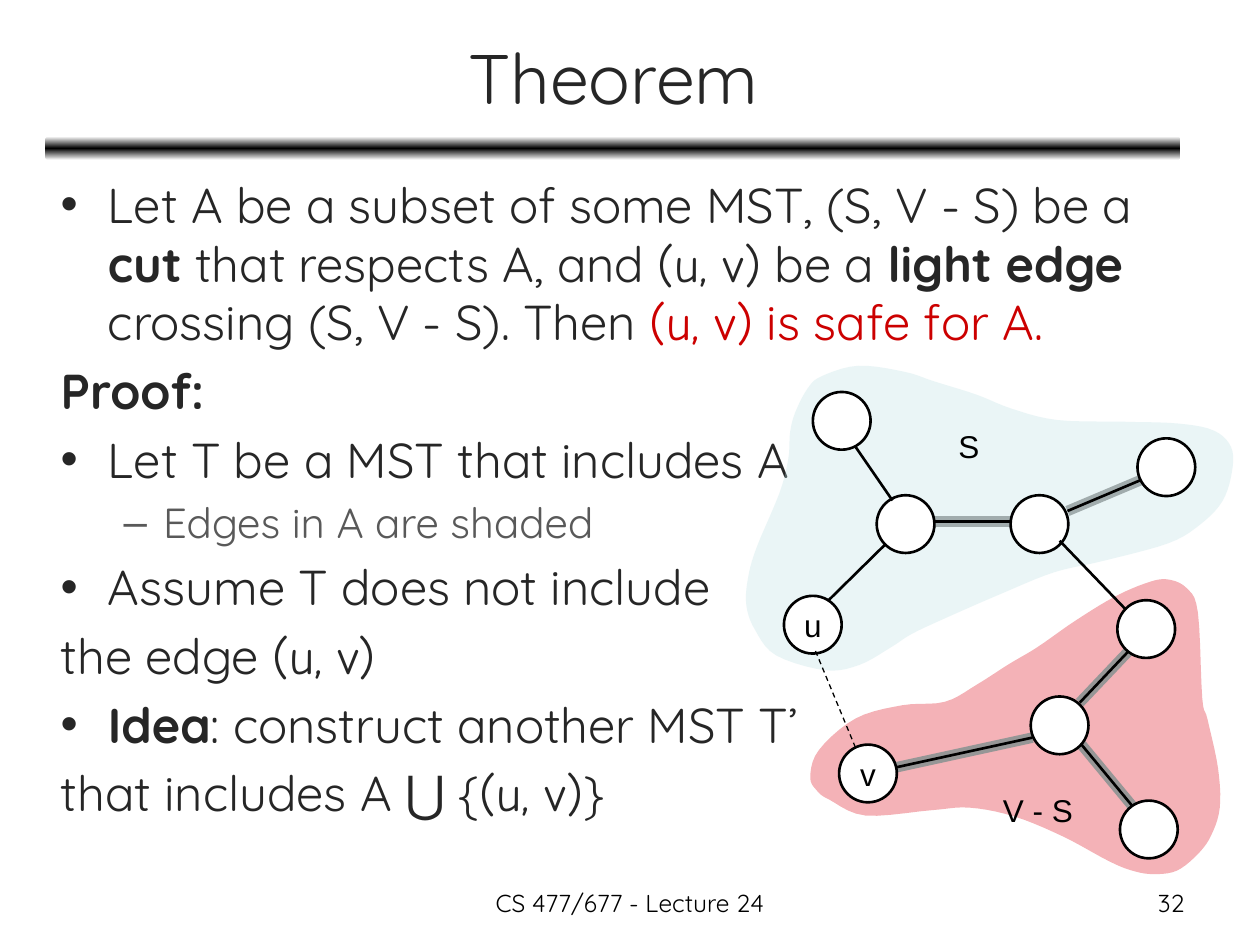
from typing import NamedTuple

from lxml import etree
from pptx import Presentation
from pptx import util as u
from pptx.dml.color import RGBColor
from pptx.enum import dml, shapes, text
from pptx.oxml.ns import qn

Pt = u.Pt
BLACK = RGBColor(0, 0, 0)
WHITE = RGBColor(255, 255, 255)
DARK = RGBColor(0x26, 0x26, 0x26)
GRAY = RGBColor(0x59, 0x59, 0x59)
SHADE = RGBColor(0x96, 0x96, 0x96)
RED = RGBColor(0xCC, 0, 0)
REST_FILL = RGBColor(0xDD, 0x01, 0x11)
S_FILL = RGBColor(0xBB, 0xE0, 0xE3)
BODY_FONT, MATH_FONT, LABEL_FONT = "Quicksand", "Comic Neue", "Arial"
NODE_SIZE = 33


class Piece(NamedTuple):
    text: str
    bold: bool = False
    font: str = BODY_FONT
    color: RGBColor = DARK


class Item(NamedTuple):
    pieces: list[Piece]
    bullet: str = ""
    level: int = 0


class Level(NamedTuple):
    size: float
    margin: float
    indent: float


class Node(NamedTuple):
    x: float
    y: float
    label: str = ""


class Edge(NamedTuple):
    start: tuple[float, float]
    end: tuple[float, float]
    shaded: bool = False


LEVELS = [Level(28, 27, -27), Level(24, 58.5, -22.5)]
PAIR = Piece("(u, v)", font=MATH_FONT)
ITEMS = [
    Item([Piece("Let A be a subset of some MST, (S, V - S) be a "), Piece("cut", True),
          Piece(" that respects A, and "), PAIR, Piece(" be a "), Piece("light edge", True),
          Piece(" crossing (S, V - S). Then "), PAIR._replace(color=RED),
          Piece(" is safe for A.", color=RED)], "•"),
    Item([Piece("Proof:", True)]),
    Item([Piece("Let T be a MST that includes A")], "•"),
    Item([Piece("Edges in A are shaded", color=GRAY)], "–", 1),
    Item([Piece("Assume T does not include")], "•"),
    Item([Piece("the edge "), PAIR]),
    Item([Piece("Idea", True), Piece(": construct another MST T’")], "•"),
    Item([Piece("that includes A ⋃ {"), PAIR, Piece("}")]),
]
NODES = [
    Node(448, 340.5, "u"), Node(501, 283), Node(577.5, 283), Node(650, 250.5),
    Node(638.5, 343), Node(464.5, 224), Node(589, 398), Node(640, 457.5),
    Node(479.5, 425.5, "v"),
]
EDGES = [
    Edge((534.5, 298), (577.5, 298), True), Edge((473, 343.5), (506, 311)),
    Edge((489, 255.5), (510, 286)), Edge((610, 292), (651.5, 274.5), True),
    Edge((605.5, 309), (643.5, 348.5)), Edge((512, 438.5), (590, 421.5), True),
    Edge((617, 401.5), (645, 372), True), Edge((618, 425.5), (647, 460.5), True),
]
REST_OUTLINE = [
    (540, 401), (515.5, 403), (489, 410.5), (468, 428.5), (463, 444), (467, 452),
    (474, 457), (494.5, 466), (532, 463), (554, 461.5), (579.5, 466.5), (607.5, 478),
    (633.5, 492), (647, 497.5), (659, 499.5), (672.5, 497.5), (684.5, 488), (692, 477.5),
    (697, 461.5), (696, 439), (690, 411), (687, 399), (684.5, 350), (678, 336),
    (666.5, 331), (654, 333.5), (636, 341.5), (614, 355), (592.5, 370), (576.5, 379.5),
    (558.5, 391),
]
S_OUTLINE = [
    (469.5, 215), (461.5, 222), (454.5, 235.5), (451.5, 247), (450.5, 262),
    (445.5, 281.5), (432.5, 312.5), (427.5, 330), (426.5, 346), (431.5, 360),
    (443.5, 374.5), (471.5, 383), (491, 380), (509, 370), (521.5, 362), (543, 352),
    (574, 338.5), (602.5, 327), (630.5, 320.5), (667.5, 310.5), (685.5, 300),
    (698.5, 286.5), (704, 269.5), (703.5, 255.5), (693.5, 246), (673, 242), (642, 241),
    (604, 240), (578, 233.5), (558, 225.5), (534, 218), (517, 212.5), (490.5, 209),
]


def place(shape, left: float, top: float, width: float, height: float) -> None:
    shape.left, shape.top, shape.width, shape.height = map(Pt, (left, top, width, height))


def style(run, size: float, font: str, color: RGBColor, bold: bool = False) -> None:
    run.font.size, run.font.name, run.font.bold = Pt(size), font, bold
    run.font.color.rgb = color


def add_item(paragraph, item: Item) -> None:
    level = LEVELS[item.level]
    paragraph.level = item.level
    properties = paragraph._p.get_or_add_pPr()
    properties.set("marL", str(Pt(level.margin)))
    properties.set("indent", str(Pt(level.indent)))
    if item.bullet:
        etree.SubElement(properties, qn("a:buChar")).set("char", item.bullet)
    else:
        etree.SubElement(properties, qn("a:buNone"))
    for piece in item.pieces:
        run = paragraph.add_run()
        run.text = piece.text
        style(run, level.size, piece.font, piece.color, piece.bold)


def smooth(points: list, steps: int = 5) -> list:
    """Return points on the closed Catmull-Rom curve through the given ones."""
    curve = []
    for i, b in enumerate(points):
        a, c, d = points[i - 1], points[(i + 1) % len(points)], points[(i + 2) % len(points)]
        for t in (step / steps for step in range(steps)):
            curve.append(tuple(
                q + t / 2 * (r - p + t * (2 * p - 5 * q + 4 * r - s + t * (3 * (q - r) + s - p)))
                for p, q, r, s in zip(a, b, c, d)))
    return curve


def add_region(slide, outline: list, color: RGBColor) -> None:
    """Draw a smooth region at 30 % opacity."""
    curve = [(Pt(x), Pt(y)) for x, y in smooth(outline)]
    builder = slide.shapes.build_freeform(*curve[0])
    builder.add_line_segments(curve[1:], close=True)
    shape = builder.convert_to_shape()
    shape.shadow.inherit = False
    shape.line.fill.background()
    shape.fill.solid()
    shape.fill.fore_color.rgb = color
    color_element = shape._element.spPr.find(qn("a:solidFill"))[0]
    etree.SubElement(color_element, qn("a:alpha")).set("val", "30000")


def add_line(slide, edge: Edge, color: RGBColor, width: float):
    line = slide.shapes.add_connector(
        shapes.MSO_CONNECTOR.STRAIGHT, *map(Pt, edge.start + edge.end))
    line.line.color.rgb, line.line.width = color, Pt(width)
    etree.SubElement(line._element.spPr, qn("a:effectLst"))
    return line


def add_node(slide, node: Node) -> None:
    shape = slide.shapes.add_shape(
        shapes.MSO_SHAPE.OVAL, *map(Pt, (node.x, node.y, NODE_SIZE, NODE_SIZE)))
    shape.shadow.inherit = False
    shape.fill.solid()
    shape.fill.fore_color.rgb = WHITE
    shape.line.color.rgb, shape.line.width = BLACK, Pt(1.5)
    if node.label:
        frame = shape.text_frame
        frame.text, frame.word_wrap = node.label, False
        frame.vertical_anchor = text.MSO_ANCHOR.MIDDLE
        frame.paragraphs[0].alignment = text.PP_ALIGN.CENTER
        style(frame.paragraphs[0].runs[0], 18, LABEL_FONT, BLACK)


def add_label(slide, words: str, box: tuple, size: float, font: str,
              alignment=text.PP_ALIGN.LEFT, wrap: bool = True) -> None:
    frame = slide.shapes.add_textbox(*map(Pt, box)).text_frame
    frame.text, frame.word_wrap = words, wrap
    frame.paragraphs[0].alignment = alignment
    style(frame.paragraphs[0].runs[0], size, font, BLACK)


def add_rule(slide) -> None:
    rule = slide.shapes.add_shape(
        shapes.MSO_SHAPE.ROUNDED_RECTANGLE, *map(Pt, (26, 78, 648.5, 13.5)))
    rule.shadow.inherit = False
    rule.line.fill.background()
    rule.fill.gradient()
    rule.fill.gradient_angle = 270
    stops = rule.fill._fill._gradFill.find(qn("a:gsLst"))
    stops.clear()
    for position, color in ((0, WHITE), (50, BLACK), (100, WHITE)):
        stop = etree.SubElement(stops, qn("a:gs"), pos=str(position * 1000))
        etree.SubElement(stop, qn("a:srgbClr"), val=str(color))


def main() -> None:
    presentation = Presentation()
    presentation.slide_width, presentation.slide_height = Pt(720), Pt(540)
    slide = presentation.slides.add_slide(presentation.slide_layouts[1])
    add_rule(slide)

    title, body = slide.placeholders
    place(title, 26.5, 8, 648, 71)
    title.text_frame.text = "Theorem"
    title.text_frame.vertical_anchor = text.MSO_ANCHOR.MIDDLE
    style(title.text_frame.paragraphs[0].runs[0], 40, BODY_FONT, DARK)
    place(body, 27.5, 96, 664.5, 399.5)
    frame = body.text_frame
    frame.auto_size = text.MSO_AUTO_SIZE.NONE
    for index, item in enumerate(ITEMS):
        add_item(frame.add_paragraph() if index else frame.paragraphs[0], item)

    add_region(slide, REST_OUTLINE, REST_FILL)
    for edge in EDGES:
        if edge.shaded:
            add_line(slide, edge, SHADE, 6)
    add_region(slide, S_OUTLINE, S_FILL)
    for node in NODES:
        add_node(slide, node)
    for edge in EDGES:
        add_line(slide, edge, BLACK, 1.5)
    light_edge = add_line(slide, Edge((466, 372), (489, 427.5)), BLACK, 0.75)
    light_edge.line.dash_style = dml.MSO_LINE.DASH

    add_label(slide, "S", (540.5, 240.5, 26.5, 29), 18, LABEL_FONT, wrap=False)
    add_label(slide, "V - S", (566, 448.5, 54.5, 29), 18, LABEL_FONT, wrap=False)
    add_label(slide, "CS 477/677 - Lecture 24", (246, 504, 228, 25), 14, BODY_FONT,
              text.PP_ALIGN.CENTER)
    add_label(slide, "32", (516, 504, 168, 25), 14, BODY_FONT, text.PP_ALIGN.RIGHT)
    presentation.save("out.pptx")


if __name__ == "__main__":
    main()
